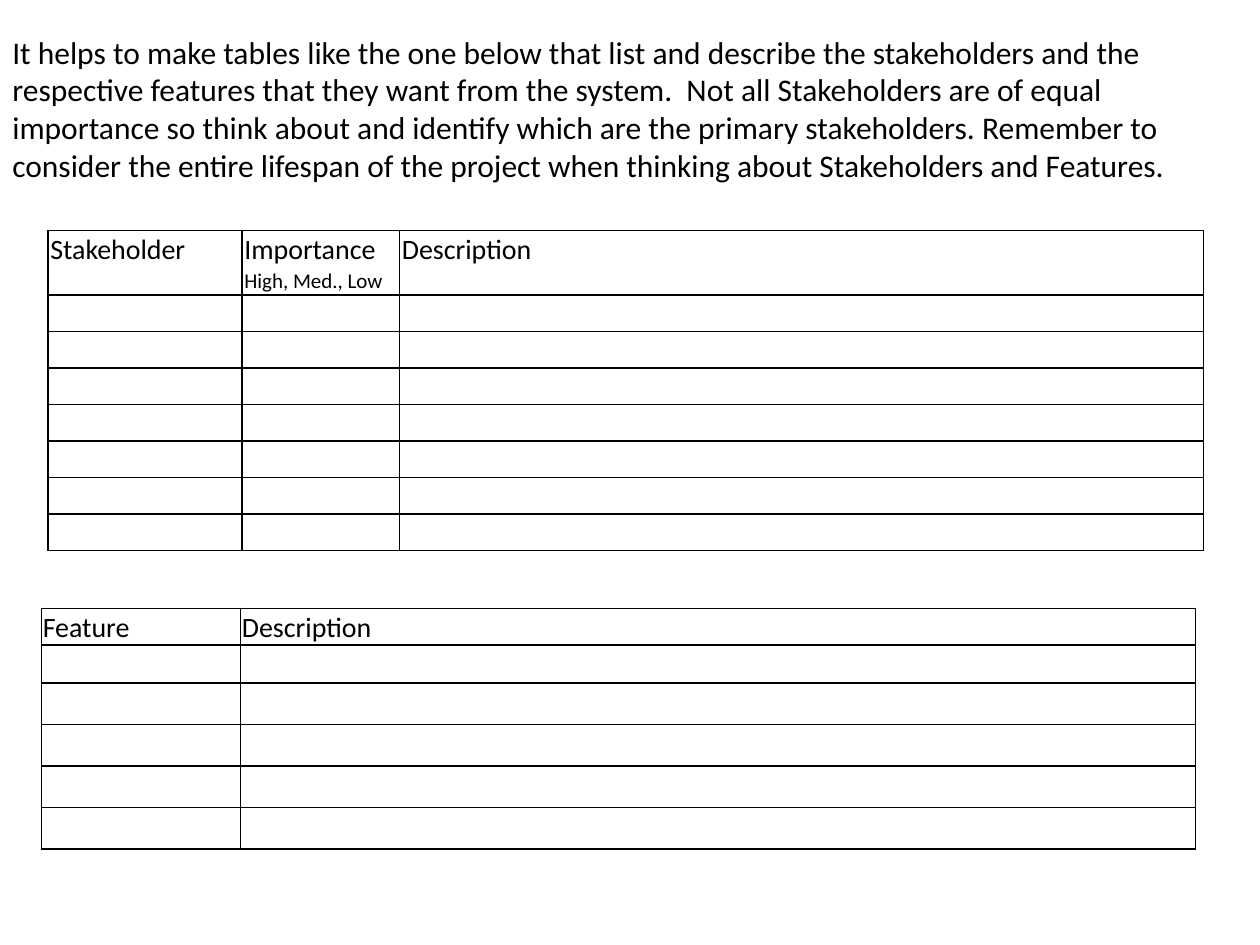
"""Build a slide with an introduction and blank stakeholder and feature tables."""
from lxml.etree import SubElement
from pptx import Presentation
from pptx.dml.color import RGBColor
from pptx.enum.text import MSO_ANCHOR as Anchor
from pptx.oxml.ns import qn
from pptx.util import Inches, Pt

BLACK = "000000"


def style_run(run, size):
    formats = {"name": "Calibri", "size": Pt(size), "bold": False}
    for key, value in formats.items():
        setattr(run.font, key, value)
    run.font.color.rgb = RGBColor.from_string(BLACK)


def add_borders(cell, width):
    properties = cell._tc.get_or_add_tcPr()
    for index, side in enumerate(("lnL", "lnR", "lnT", "lnB")):
        line = properties.makeelement(qn(f"a:{side}"), {"w": str(Pt(width))})
        fill = SubElement(line, qn("a:solidFill"))
        SubElement(fill, qn("a:srgbClr"), val=BLACK)
        properties.insert(index, line)


deck = Presentation()
deck.slide_width, deck.slide_height = Inches(10), Inches(7.5)
slide = deck.slides.add_slide(deck.slide_layouts[6])

intro = slide.shapes.add_textbox(Inches(0), Inches(0.49), Inches(10), Inches(1.04))
intro_format = {"word_wrap": True, "vertical_anchor": Anchor.MIDDLE, "margin_bottom": Inches(0.35)}
for key, value in intro_format.items():
    setattr(intro.text_frame, key, value)
intro_run = intro.text_frame.paragraphs[0].add_run()
intro_run.text = (
    "It helps to make tables like the one below that list and describe the stakeholders "
    "and the respective features that they want from the system.  Not all Stakeholders "
    "are of equal importance so think about and identify which are the primary "
    "stakeholders. Remember to consider the entire lifespan of the project when thinking "
    "about Stakeholders and Features."
)
style_run(intro_run, 18)

stakeholders = {
    "left": 0.38, "top": 1.83, "inset": 0.02,
    "columns": [1.54, 1.25, 6.38],
    "rows": [0.51] + [0.29] * 7,
    "headings": [
        [("Stakeholder", 16)],
        [("Importance", 16), ("High, Med., Low", 12)],
        [("Description", 16)],
    ],
}
features = {
    "left": 0.33, "top": 4.83, "inset": 0.01,
    "columns": [1.58, 7.58],
    "rows": [0.29, 0.3] + [0.33] * 4,
    "headings": [[("Feature", 16)], [("Description", 16)]],
}

for plan in (stakeholders, features):
    widths, heights = plan["columns"], plan["rows"]
    grid = slide.shapes.add_table(
        len(heights), len(widths), Inches(plan["left"]), Inches(plan["top"]),
        Inches(sum(widths)), Inches(sum(heights)),
    ).table
    grid.first_row = grid.horz_banding = False
    for column, width in zip(grid.columns, widths):
        column.width = Inches(width)
    for row, height in zip(grid.rows, heights):
        row.height = Inches(height)

    cell_format = {
        "margin_left": Inches(plan["inset"]), "margin_right": Inches(plan["inset"]),
        "margin_top": 0, "margin_bottom": 0, "vertical_anchor": Anchor.TOP,
    }
    for cell in grid.iter_cells():
        for key, value in cell_format.items():
            setattr(cell, key, value)
        cell.fill.background()
        add_borders(cell, 1)
        paragraph = cell.text_frame.paragraphs[0]
        paragraph.line_spacing = 1.07
        SubElement(paragraph._p, qn("a:endParaRPr"), sz="1600")

    for column, heading in enumerate(plan["headings"]):
        frame = grid.cell(0, column).text_frame
        for index, (wording, size) in enumerate(heading):
            paragraph = frame.add_paragraph() if index else frame.paragraphs[0]
            paragraph.line_spacing = 1.07
            run = paragraph.add_run()
            run.text = wording
            style_run(run, size)

deck.save("out.pptx")
